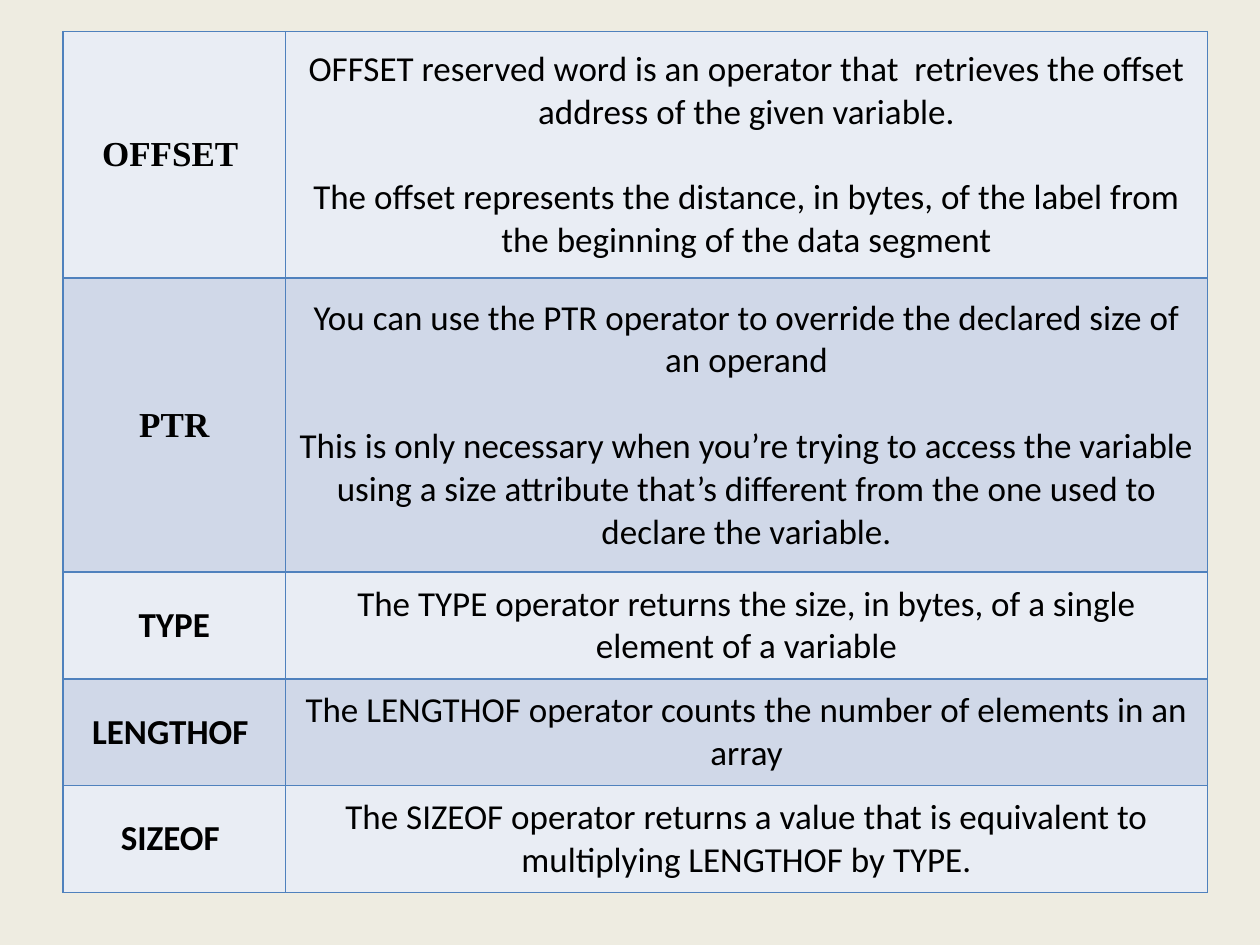
import pptx
import pptx.dml.color
import pptx.enum.text
import pptx.oxml
import pptx.oxml.ns
import pptx.util

Pt = pptx.util.Pt
RGBColor = pptx.dml.color.RGBColor

CREAM = RGBColor(0xEE, 0xEC, 0xE1)
PALE_BLUE = RGBColor(0xE9, 0xED, 0xF4)
SOFT_BLUE = RGBColor(0xD0, 0xD8, 0xE8)
BORDER_BLUE = RGBColor(0x4F, 0x81, 0xBD)
BLACK = RGBColor(0, 0, 0)

TABLE_BOX = (36, 18, 654, 492)
NAME_WIDTH = 127.2
BODY_FONT = "Calibri"
SERIF_FONT = "Times New Roman"
PARAGRAPH_GAP = 24.4

# operator name, font of the name, row height, description paragraphs
OPERATORS = [
    ("OFFSET ", SERIF_FONT, 141, [
        "OFFSET reserved word is an operator that  retrieves the offset "
        "address of the given variable.",
        "The offset represents the distance, in bytes, of the label from "
        "the beginning of the data segment"]),
    ("PTR", SERIF_FONT, 168, [
        "You can use the PTR operator to override the declared size of "
        "an operand",
        "This is only necessary when you’re trying to access the variable "
        "using a size attribute that’s different from the one used to "
        "declare the variable."]),
    ("TYPE", BODY_FONT, 61, [
        "The TYPE operator returns the size, in bytes, of a single "
        "element of a variable"]),
    ("LENGTHOF ", BODY_FONT, 61, [
        "The LENGTHOF operator counts the number of elements in an array"]),
    ("SIZEOF ", BODY_FONT, 61, [
        "The SIZEOF operator returns a value that is equivalent to "
        "multiplying LENGTHOF by TYPE."]),
]


def set_borders(cell):
    properties = cell._tc.get_or_add_tcPr()
    for position, side in enumerate(("lnL", "lnR", "lnT", "lnB")):
        line = pptx.oxml.parse_xml(
            f'<a:{side} {pptx.oxml.ns.nsdecls("a")} w="{Pt(1)}">'
            f'<a:solidFill><a:srgbClr val="{BORDER_BLUE}"/></a:solidFill>'
            f'</a:{side}>')
        properties.insert(position, line)


def fill_cell(cell, texts, color, font_name, bold):
    cell.fill.solid()
    cell.fill.fore_color.rgb = color
    cell.vertical_anchor = pptx.enum.text.MSO_ANCHOR.MIDDLE
    set_borders(cell)
    font_format = {"name": font_name, "size": Pt(20), "bold": bold}
    frame = cell.text_frame
    for index, text in enumerate(texts):
        para = frame.add_paragraph() if index else frame.paragraphs[0]
        para.alignment = pptx.enum.text.PP_ALIGN.CENTER
        para.space_before = Pt(PARAGRAPH_GAP if index else 0)
        span = para.add_run()
        span.text = text
        span.font.color.rgb = BLACK
        for name, value in font_format.items():
            setattr(span.font, name, value)


def add_operator_table(page, box):
    left, top, width, height = box
    table = page.shapes.add_table(
        len(OPERATORS), 2, Pt(left), Pt(top), Pt(width), Pt(height)).table
    table.first_row = False
    table.horz_banding = False
    table.columns[0].width = Pt(NAME_WIDTH)
    table.columns[1].width = Pt(width - NAME_WIDTH)
    for index, (name, name_font, row_height, texts) in enumerate(OPERATORS):
        color = SOFT_BLUE if index % 2 else PALE_BLUE
        table.rows[index].height = Pt(row_height)
        fill_cell(table.cell(index, 0), [name], color, name_font, True)
        fill_cell(table.cell(index, 1), texts, color, BODY_FONT, False)


def main():
    deck = pptx.Presentation()
    deck.slide_width, deck.slide_height = Pt(720), Pt(540)
    page = deck.slides.add_slide(deck.slide_layouts[6])
    page.background.fill.solid()
    page.background.fill.fore_color.rgb = CREAM
    add_operator_table(page, TABLE_BOX)
    deck.save("out.pptx")


if __name__ == "__main__":
    main()
